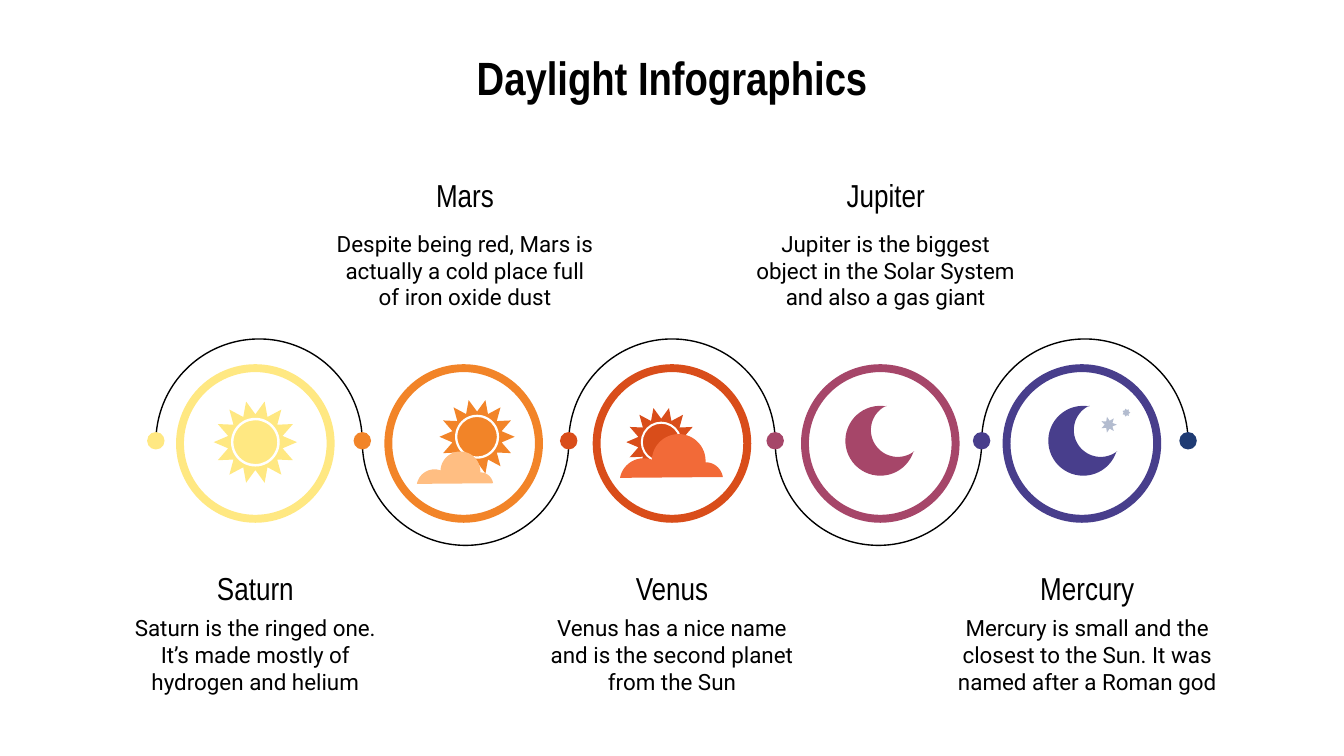
"""Build the daylight slide: five planets along a wavy line."""
from dataclasses import dataclass
from math import cos, pi, radians, sin

from pptx import Presentation
from pptx.dml.color import RGBColor
from pptx.enum.shapes import MSO_SHAPE
from pptx.enum.text import MSO_ANCHOR, PP_ALIGN
from pptx.shapes.autoshape import Shape
from pptx.slide import Slide
from pptx.text.text import TextFrame
from pptx.util import Inches, Pt

BLACK = RGBColor(0x00, 0x00, 0x00)
WHITE = RGBColor(0xFF, 0xFF, 0xFF)
YELLOW = RGBColor(0xFF, 0xE8, 0x82)
ORANGE = RGBColor(0xF2, 0x84, 0x28)
RED = RGBColor(0xD9, 0x4D, 0x1A)
PLUM = RGBColor(0xA6, 0x46, 0x69)
VIOLET = RGBColor(0x48, 0x3E, 0x8C)
NAVY = RGBColor(0x1F, 0x3B, 0x73)
PEACH = RGBColor(0xFF, 0xBE, 0x82)
CORAL = RGBColor(0xF2, 0x6A, 0x38)
SILVER = RGBColor(0xB3, 0xBC, 0xCF)

HEAD_FONT = "Arial Narrow"
BODY_FONT = "Roboto"
WAVE_LEFT, WAVE_RIGHT, WAVE_Y = 1.16, 8.84, 3.29
WAVE_STEP = (WAVE_RIGHT - WAVE_LEFT) / 5
RING_Y, DOT_Y = 3.3, 3.28

Points = list[tuple[float, float]]


@dataclass(frozen=True)
class Planet:
    """Words, colour and centres of one planet."""
    name: str
    note: str
    color: RGBColor
    text_x: float
    ring_x: float


PLANETS = [
    Planet("Saturn", "Saturn is the ringed one. It’s made mostly of hydrogen and helium",
           YELLOW, 1.9, 1.9),
    Planet("Mars", "Despite being red, Mars is actually a cold place full of iron oxide dust",
           ORANGE, 3.46, 3.45),
    Planet("Venus", "Venus has a nice name and is the second planet from the Sun",
           RED, 5.0, 5.0),
    Planet("Jupiter", "Jupiter is the biggest object in the Solar System and also a gas giant",
           PLUM, 6.59, 6.55),
    Planet("Mercury", "Mercury is small and the closest to the Sun. It was named after a Roman god",
           VIOLET, 8.09, 8.05),
]


def paint(shape: Shape, color: RGBColor) -> None:
    """Give a shape a plain fill with no line or shadow."""
    shape.shadow.inherit = False
    shape.fill.solid()
    shape.fill.fore_color.rgb = color
    shape.line.fill.background()


def add_round(slide: Slide, kind: MSO_SHAPE, x: float, y: float, size: float) -> Shape:
    """Add a round preset shape about a centre."""
    return slide.shapes.add_shape(kind, Inches(x - size / 2), Inches(y - size / 2),
                                  Inches(size), Inches(size))


def add_dot(slide: Slide, x: float, color: RGBColor) -> None:
    """Add a dot on the wave."""
    paint(add_round(slide, MSO_SHAPE.OVAL, x, DOT_Y, 0.13), color)


def add_ring(slide: Slide, x: float, y: float, size: float, color: RGBColor) -> None:
    """Add a thin ring."""
    ring = add_round(slide, MSO_SHAPE.DONUT, x, y, size)
    ring.adjustments[0] = 0.05
    paint(ring, color)


def add_wave(slide: Slide, x: float, top: bool) -> None:
    """Add one half circle of the wave."""
    wave = add_round(slide, MSO_SHAPE.ARC, x, WAVE_Y, WAVE_STEP)
    half_turn = 108.0
    wave.adjustments[0] = half_turn if top else 0
    wave.adjustments[1] = 0 if top else half_turn
    wave.shadow.inherit = False
    wave.fill.background()
    wave.line.color.rgb = BLACK
    wave.line.width = Pt(0.75)


def add_form(slide: Slide, points: Points, color: RGBColor) -> None:
    """Add a closed outline through the points."""
    spots = [(Inches(x), Inches(y)) for x, y in points]
    form = slide.shapes.build_freeform(*spots[0])
    form.add_line_segments(spots[1:], close=True)
    paint(form.convert_to_shape(), color)


def curve(x: float, y: float, size: float, start: float, end: float) -> Points:
    """Return points along a circle between two angles."""
    steps = 40
    turns = [radians(start + (end - start) * i / steps) for i in range(steps + 1)]
    return [(x + size * cos(t), y + size * sin(t)) for t in turns]


def add_star(slide: Slide, x: float, y: float, tips: int, size: float,
             inner: float, color: RGBColor) -> None:
    """Add a star with one tip to the right."""
    points = []
    for i in range(2 * tips):
        reach = inner if i % 2 else size
        points.append((x + reach * cos(pi * i / tips), y + reach * sin(pi * i / tips)))
    add_form(slide, points, color)


def add_sun(slide: Slide, x: float, y: float, size: float, color: RGBColor) -> None:
    """Add a sun with a white ring."""
    add_star(slide, x, y, 14, size, size * 0.67, color)
    add_ring(slide, x, y, size * 1.17, WHITE)


def add_cloud(slide: Slide, left: float, top: float, width: float, color: RGBColor) -> None:
    """Add a cloud made of three bumps."""
    bumps = (curve(0.18, 0.36, 0.18, 191, 292) + curve(0.44, 0.2, 0.2, 184, 365)
             + curve(0.64, 0.34, 0.13, 270, 351))
    scale = width / 0.77
    add_form(slide, [(left + x * scale, top + y * scale) for x, y in bumps], color)


def add_moon(slide: Slide, x: float, color: RGBColor) -> None:
    """Add a crescent open to the upper right."""
    outer = curve(x, 3.28, 0.26, 18, 280)
    inner = curve(x + 0.13, 3.2, 0.2, 245, 52)
    add_form(slide, outer + inner, color)


def write(frame: TextFrame, text: str, font: str, size: float, bold: bool = False) -> None:
    """Write one centred run."""
    frame.word_wrap = True
    frame.margin_left = frame.margin_right = Inches(0.1)
    frame.margin_top = frame.margin_bottom = Inches(0.1)
    line = frame.paragraphs[0]
    line.alignment = PP_ALIGN.CENTER
    run = line.add_run()
    run.text = text
    run.font.name = font
    run.font.size = Pt(size)
    run.font.bold = bold
    run.font.color.rgb = BLACK


def add_label(slide: Slide, planet: Planet, above: bool) -> None:
    """Add the name and note of a planet."""
    name_top, note_top = (1.21, 1.61) if above else (4.13, 4.47)
    width = Inches(2.15)
    left = Inches(planet.text_x) - width // 2
    name = slide.shapes.add_textbox(left, Inches(name_top), width, Inches(0.43))
    write(name.text_frame, planet.name, HEAD_FONT, 17)
    note = slide.shapes.add_textbox(left, Inches(note_top), width, Inches(0.69))
    write(note.text_frame, planet.note, BODY_FONT, 12)


def main() -> None:
    """Build and save the slide."""
    deck = Presentation()
    deck.slide_width = Inches(10)
    deck.slide_height = deck.slide_width * 9 // 16
    slide = deck.slides.add_slide(deck.slide_layouts[5])

    title = slide.shapes.title
    title.left, title.top = Inches(0.45), Inches(0.26)
    title.width, title.height = Inches(9.1), Inches(0.63)
    title.text_frame.vertical_anchor = MSO_ANCHOR.MIDDLE
    write(title.text_frame, "Daylight Infographics", HEAD_FONT, 25, True)

    for i, planet in enumerate(PLANETS):
        add_label(slide, planet, above=i % 2 == 1)
        add_wave(slide, WAVE_LEFT + WAVE_STEP * (i + 0.5), top=i % 2 == 0)
        add_ring(slide, planet.ring_x, RING_Y, 1.18, planet.color)
    for i, color in enumerate([planet.color for planet in PLANETS] + [NAVY]):
        add_dot(slide, WAVE_LEFT + WAVE_STEP * i, color)

    add_sun(slide, 1.9, 3.29, 0.31, YELLOW)
    add_sun(slide, 3.55, 3.25, 0.28, ORANGE)
    add_cloud(slide, 3.1, 3.36, 0.57, PEACH)
    add_sun(slide, 4.92, 3.29, 0.26, RED)
    add_cloud(slide, 4.61, 3.23, 0.77, CORAL)
    add_moon(slide, 6.55, PLUM)
    add_moon(slide, 8.06, VIOLET)
    add_star(slide, 8.25, 3.16, 7, 0.06, 0.03, SILVER)
    add_star(slide, 8.38, 3.07, 7, 0.03, 0.02, SILVER)

    deck.save("out.pptx")


if __name__ == "__main__":
    main()
